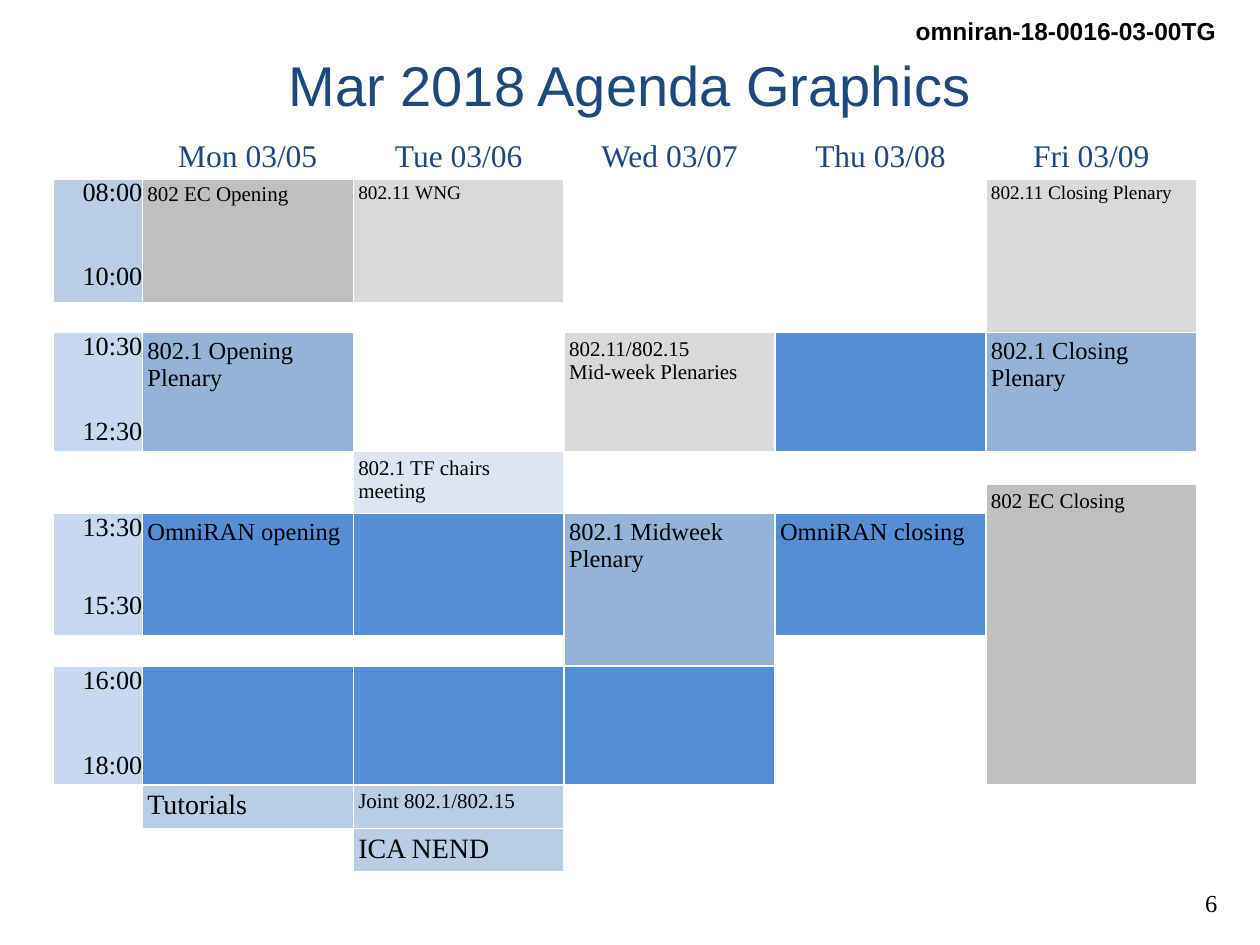
from typing import NamedTuple

import pptx
import pptx.dml.color
import pptx.enum.text
import pptx.oxml
import pptx.oxml.ns
import pptx.util

Inches, Pt = pptx.util.Inches, pptx.util.Pt
ALIGN = pptx.enum.text.PP_ALIGN
ANCHOR = pptx.enum.text.MSO_ANCHOR
SLIDE_W, SLIDE_H = 10, 7.5
SERIF, SANS = "Times New Roman", "Arial"

COLORS = {
    "white": "FFFFFF", "black": "000000", "navy": "1F497D",
    "early": "B9CDE5", "time": "C6D9F1", "ec": "BFBFBF", "wg11": "D9D9D9",
    "plenary": "95B3D7", "omniran": "558ED5", "chairs": "DCE6F2",
}

# Agenda grid: one time column, five days
DAYS = ["Mon 03/05", "Tue 03/06", "Wed 03/07", "Thu 03/08", "Fri 03/09"]
MON, TUE, WED, THU, FRI = range(1, 6)
COL_WIDTHS = [0.71] + [1.674] * len(DAYS)
ROW_HEIGHTS = [0.29, 0.99, 0.24, 0.92, 0.26, 0.23, 0.97, 0.24, 0.92, 0.33, 0.33]


class TextItem(NamedTuple):
    text: str
    left: float  # shares of the slide's size
    top: float
    width: float
    height: float
    size: int
    font: str
    color: str
    align: int
    bold: bool = False


class Slot(NamedTuple):
    row: int
    start: str
    end: str
    gap: int  # points between the two times
    color: str = "time"


class Session(NamedTuple):
    row: int
    col: int
    color: str
    text: str = ""
    size: int = 12
    rows: int = 1


TEXTS = [
    TextItem("omniran-18-0016-03-00TG", 0.67, 0.01, 0.305, 0.045, 14, SANS, "black", ALIGN.RIGHT, True),
    TextItem("Mar 2018 Agenda Graphics", 0.05, 0.037, 0.9, 0.104, 32, SANS, "navy", ALIGN.CENTER),
    TextItem("6", 0.933, 0.933, 0.043, 0.045, 14, SERIF, "black", ALIGN.RIGHT),
]

SLOTS = [
    Slot(1, "08:00", "10:00", 32, "early"),
    Slot(3, "10:30", "12:30", 32),
    Slot(6, "13:30", "15:30", 28),
    Slot(8, "16:00", "18:00", 32),
]

SESSIONS = [
    Session(1, MON, "ec", "802 EC Opening"),
    Session(1, TUE, "wg11", "802.11 WNG", 11),
    Session(1, FRI, "wg11", "802.11 Closing Plenary", 11, rows=2),
    Session(3, MON, "plenary", "802.1 Opening Plenary", 14),
    Session(3, WED, "wg11", "802.11/802.15\vMid-week Plenaries"),
    Session(3, THU, "omniran"),
    Session(3, FRI, "plenary", "802.1 Closing Plenary", 14),
    Session(4, TUE, "chairs", "802.1 TF chairs meeting", rows=2),
    Session(5, FRI, "ec", "802 EC Closing", rows=4),
    Session(6, MON, "omniran", "OmniRAN opening", 14),
    Session(6, TUE, "omniran"),
    Session(6, WED, "plenary", "802.1 Midweek Plenary", 14, rows=2),
    Session(6, THU, "omniran", "OmniRAN closing", 14),
    Session(8, MON, "omniran"),
    Session(8, TUE, "omniran"),
    Session(8, WED, "omniran"),
    Session(9, MON, "early", "Tutorials", 16),
    Session(9, TUE, "early", "Joint 802.1/802.15"),
    Session(10, TUE, "early", "ICA NEND", 16),
]

# Free time that spans two rows
BREAKS = [Session(4, c, "white", rows=2) for c in (0, MON, WED, THU)]
BREAKS += [Session(9, c, "white", rows=2) for c in (0, WED, THU)]


def rgb(name: str) -> pptx.dml.color.RGBColor:
    return pptx.dml.color.RGBColor.from_string(COLORS[name])


def format_text(tf, size: float, font: str, color: str, align: int, bold: bool = False) -> None:
    for p in tf.paragraphs:
        p.alignment = align
        for r in p.runs:
            r.font.size, r.font.name, r.font.bold = Pt(size), font, bold
            r.font.color.rgb = rgb(color)


def add_text(slide, item: TextItem) -> None:
    s = slide.shapes.add_textbox(
        Inches(item.left * SLIDE_W), Inches(item.top * SLIDE_H),
        Inches(item.width * SLIDE_W), Inches(item.height * SLIDE_H))
    tf = s.text_frame
    tf.word_wrap = True
    tf.vertical_anchor = ANCHOR.MIDDLE
    tf.text = item.text
    format_text(tf, item.size, item.font, item.color, item.align, item.bold)


def reset_cell(cell, header: bool) -> None:
    """White cell with thin white borders that never stretches its row."""
    tc_pr = cell._tc.get_or_add_tcPr()
    for side in "LRTB":
        width = Pt(3 if header and side == "B" else 1)
        tc_pr.append(pptx.oxml.parse_xml(
            f'<a:ln{side} {pptx.oxml.ns.nsdecls("a")} w="{width}"><a:solidFill>'
            f'<a:srgbClr val="{COLORS["white"]}"/></a:solidFill></a:ln{side}>'))
    cell.text_frame.paragraphs[0]._p.get_or_add_endParaRPr().set("sz", "800")
    fill_cell(cell, "white", 0)


def fill_cell(cell, color: str, margin: float) -> None:
    cell.fill.solid()
    cell.fill.fore_color.rgb = rgb(color)
    cell.margin_left = cell.margin_right = Inches(margin)
    cell.margin_top = cell.margin_bottom = Inches(margin)


def add_slot(table, slot: Slot) -> None:
    cell = table.cell(slot.row, 0)
    fill_cell(cell, slot.color, 0)
    tf = cell.text_frame
    tf.text = f"{slot.start}\n{slot.end}"
    tf.paragraphs[1].space_before = Pt(slot.gap)
    format_text(tf, 15, SERIF, "black", ALIGN.RIGHT)


def add_session(table, session: Session) -> None:
    cell = table.cell(session.row, session.col)
    if session.rows > 1:
        cell.merge(table.cell(session.row + session.rows - 1, session.col))
    fill_cell(cell, session.color, 0.04)
    if session.text:
        cell.text_frame.paragraphs[0].text = session.text
        format_text(cell.text_frame, session.size, SERIF, "black", ALIGN.LEFT)


def add_agenda(slide) -> None:
    s = slide.shapes.add_table(
        len(ROW_HEIGHTS), len(COL_WIDTHS), Inches(0.42), Inches(1.11),
        Inches(sum(COL_WIDTHS)), Inches(sum(ROW_HEIGHTS)))
    table = s.table
    table.first_row = table.horz_banding = False
    for column, width in zip(table.columns, COL_WIDTHS):
        column.width = Inches(width)
    for i, (row, height) in enumerate(zip(table.rows, ROW_HEIGHTS)):
        row.height = Inches(height)
        for cell in row.cells:
            reset_cell(cell, header=i == 0)

    # Day names, times and sessions
    for col, day in enumerate(DAYS, start=1):
        tf = table.cell(0, col).text_frame
        tf.text = day
        format_text(tf, 18, SERIF, "navy", ALIGN.CENTER)
    for slot in SLOTS:
        add_slot(table, slot)
    for session in BREAKS + SESSIONS:
        add_session(table, session)


def main() -> None:
    prs = pptx.Presentation()
    prs.slide_width, prs.slide_height = Inches(SLIDE_W), Inches(SLIDE_H)
    slide = prs.slides.add_slide(prs.slide_layouts[6])
    for item in TEXTS:
        add_text(slide, item)
    add_agenda(slide)
    prs.save("out.pptx")


if __name__ == "__main__":
    main()
